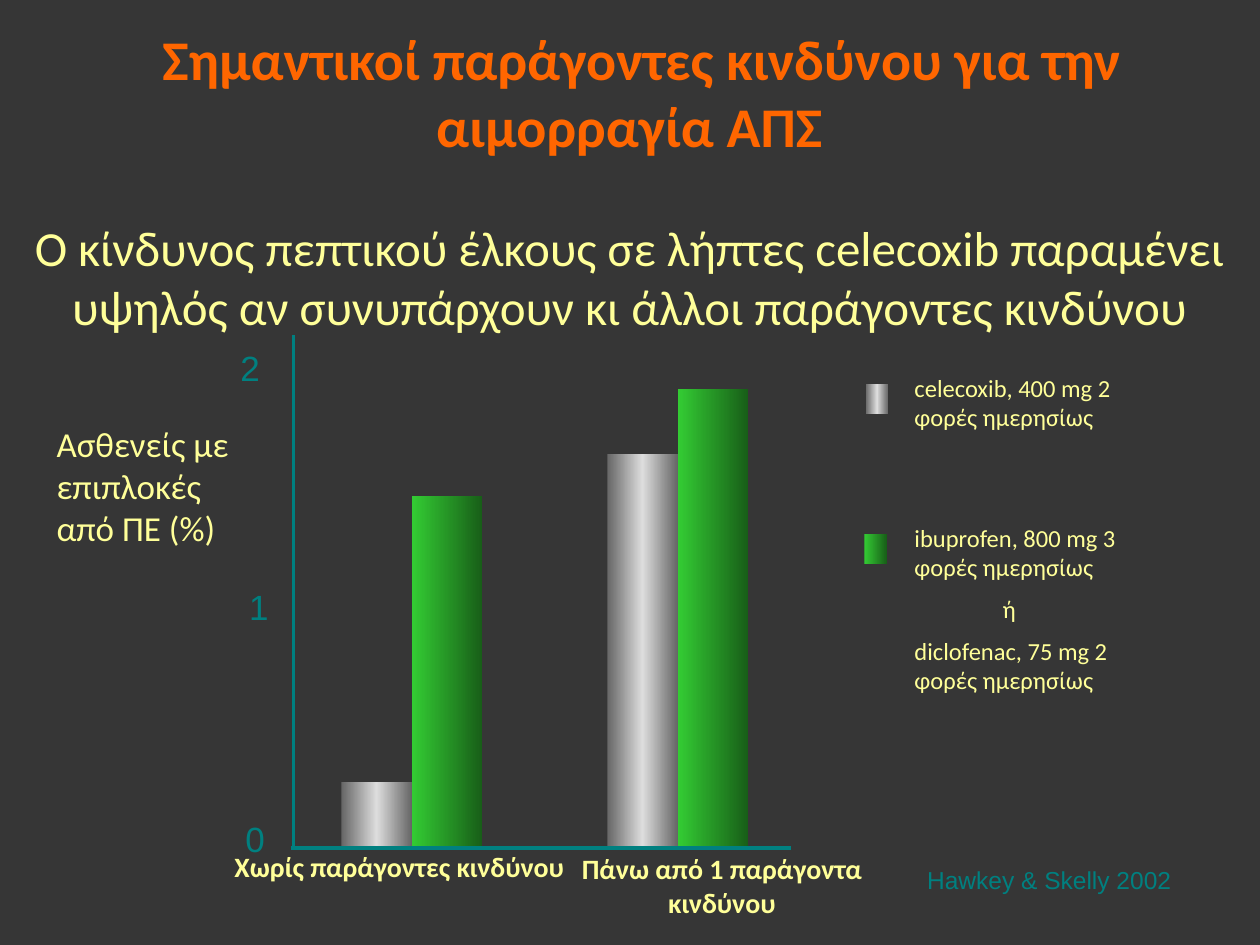
"""Build a slide comparing peptic ulcer complications by drug and risk factors."""
from copy import deepcopy

from pptx import Presentation
from pptx.dml.color import RGBColor
from pptx.enum.shapes import MSO_CONNECTOR, MSO_SHAPE
from pptx.enum.text import MSO_ANCHOR, MSO_AUTO_SIZE, PP_ALIGN
from pptx.oxml.ns import qn
from pptx.util import Inches, Pt

COLORS = {"bg": "363636", "text": "FFFF99", "heading": "FF6600", "axis": "008080"}
GRADIENTS = {
    "celecoxib": ["666666", "DDDDDD", "666666"],
    "nsaid": ["33CC33", "185E18"],
}
BASELINE, BAR_W = 6.73, 0.56


def rgb(name):
    return RGBColor.from_string(COLORS.get(name, name))


class SlideBuilder:
    """Holds the style and the current slide."""

    def __init__(self, prs):
        self.slide = prs.slides.add_slide(prs.slide_layouts[5])
        self.shapes = self.slide.shapes
        fill = self.slide.background.fill
        fill.solid()
        fill.fore_color.rgb = rgb("bg")

    def set_text(self, sp, paragraphs, size, color="text", font="Calibri", bold=False,
                 align=PP_ALIGN.LEFT, anchor=MSO_ANCHOR.TOP, space=0, indents=None):
        tf = sp.text_frame
        frame = {"word_wrap": True, "auto_size": MSO_AUTO_SIZE.NONE,
                 "vertical_anchor": anchor}
        for key, value in frame.items():
            setattr(tf, key, value)
        for i, text in enumerate(paragraphs):
            p = tf.paragraphs[0] if i == 0 else tf.add_paragraph()
            p.alignment = align
            if i:
                p.space_before = Pt(space)
            if indents and i in indents:
                p._p.get_or_add_pPr().set("indent", str(Inches(indents[i])))
            r = p.add_run()
            r.text = text
            for key, value in {"name": font, "size": Pt(size), "bold": bold}.items():
                setattr(r.font, key, value)
            r.font.color.rgb = rgb(color)

    def title(self, box, text, size):
        sp = self.shapes.title
        for key, value in zip(("left", "top", "width", "height"), box):
            setattr(sp, key, Inches(value))
        self.set_text(sp, [text], size, align=PP_ALIGN.CENTER, anchor=MSO_ANCHOR.MIDDLE)

    def text(self, box, *paragraphs, **style):
        sp = self.shapes.add_textbox(*map(Inches, box))
        self.set_text(sp, paragraphs, **style)

    def bar(self, box, series):
        sp = self.shapes.add_shape(MSO_SHAPE.RECTANGLE, *map(Inches, box))
        sp.shadow.inherit = False
        sp.line.fill.background()
        sp.fill.gradient()
        sp.fill.gradient_angle = 0
        colors = GRADIENTS[series]
        stops = sp._element.spPr.find(".//" + qn("a:gsLst"))
        for _ in colors[2:]:
            stops.append(deepcopy(stops[-1]))
        for i, (stop, color) in enumerate(zip(sp.fill.gradient_stops, colors)):
            stop.position = i / (len(colors) - 1)
            stop.color.rgb = rgb(color)

    def line(self, *ends):
        cx = self.shapes.add_connector(MSO_CONNECTOR.STRAIGHT, *map(Inches, ends))
        cx.line.color.rgb = rgb("axis")
        cx.line.width = Pt(2)
        spPr = cx._element.spPr
        spPr.append(spPr.makeelement(qn("a:effectLst"), {}))


def main():
    prs = Presentation()
    prs.slide_width, prs.slide_height = Inches(10), Inches(7.5)
    s = SlideBuilder(prs)

    s.title((0, 1.57, 9.99, 1.25),
            "Ο κίνδυνος πεπτικού έλκους σε λήπτες celecoxib παραμένει "
            "υψηλός αν συνυπάρχουν κι άλλοι παράγοντες κινδύνου", 28)
    s.text((0, 0.13, 9.99, 1.19),
           "Σημαντικοί παράγοντες κινδύνου για την αιμορραγία ΑΠΣ",
           size=32, color="heading", bold=True, align=PP_ALIGN.CENTER,
           anchor=MSO_ANCHOR.MIDDLE, indents={0: 0.2})
    s.text((7.26, 6.82, 2.74, 0.33), "Hawkey & Skelly 2002",
           size=14, color="axis", font="Arial")

    s.bar((6.87, 3.05, 0.18, 0.24), "celecoxib")
    s.text((7.16, 2.91, 1.97, 0.57), "celecoxib, 400 mg 2 φορές ημερησίως", size=14)
    s.bar((6.86, 4.24, 0.18, 0.24), "nsaid")
    s.text((7.16, 4.1, 1.96, 1.51), "ibuprofen, 800 mg 3 φορές ημερησίως", "ή",
           "diclofenac, 75 mg 2 φορές ημερησίως", size=14, space=7, indents={1: 0.7})

    s.text((0.35, 3.3, 1.81, 1.11), "Ασθενείς με επιπλοκές από ΠΕ (%)", size=20)
    for value, left, top in (("2", 1.81, 2.7), ("1", 1.88, 4.6), ("0", 1.85, 6.44)):
        s.text((left, top, 0.63, 0.43), value, size=20, color="axis", font="Arial")

    groups = (
        ("Χωρίς παράγοντες κινδύνου", (1.76, 6.69), 2.71, (6.21, 3.94)),
        ("Πάνω από 1 παράγοντα κινδύνου", (4.32, 6.71), 4.82, (3.6, 3.09)),
    )
    for label, corner, left, tops in groups:
        s.text((*corner, 2.82, 0.64), label, size=16, bold=True, align=PP_ALIGN.CENTER)
        for i, (series, top) in enumerate(zip(GRADIENTS, tops)):
            s.bar((left + i * BAR_W, top, BAR_W, BASELINE - top), series)

    s.line(2.31, BASELINE, 6.28, BASELINE)
    s.line(2.33, 2.66, 2.33, BASELINE)
    prs.save("out.pptx")


if __name__ == "__main__":
    main()
